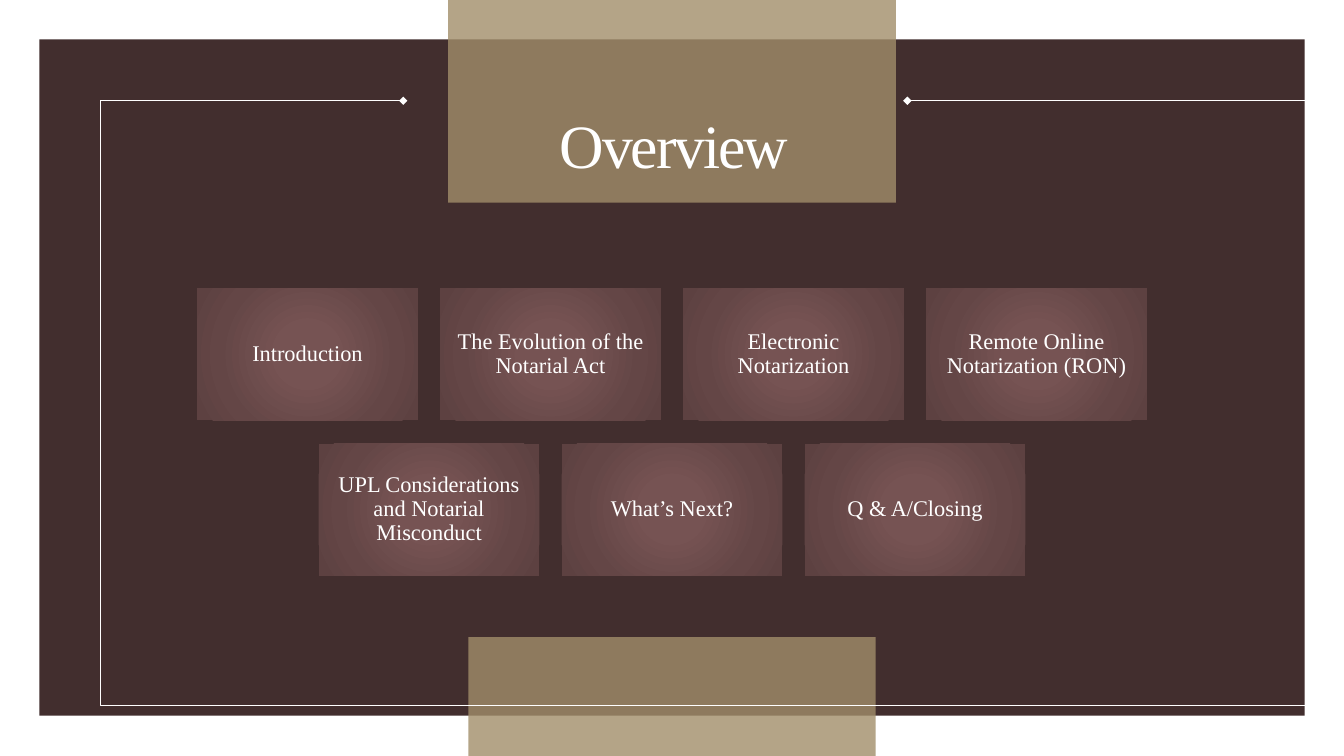
from lxml import etree
from pptx import Presentation
from pptx import util as u
from pptx.dml.color import RGBColor
from pptx.enum import shapes, text
from pptx.oxml import parse_xml
from pptx.oxml.ns import nsdecls, qn

WIDE, HIGH = 13.33, 7.5
FONT = "Times New Roman"
HUES = {"panel": "422E2E", "gold": "A28E6A", "white": "FFFFFF",
        "core": "765353", "mid": "644646", "edge": "5D4141"}
STOPS = [(0, "core"), (23, "core"), (69, "mid"), (97, "edge")]
CARD_W, CARD_H = 2.19, 1.31
STEP_X, STEP_Y = 2.41, 1.54
CARD_TOP = 2.86
TOPICS = [
    ["Introduction", "The Evolution of the Notarial Act",
     "Electronic Notarization", "Remote Online Notarization (RON)"],
    ["UPL Considerations and Notarial Misconduct", "What’s Next?",
     "Q & A/Closing"],
]


def hue(name):
    return RGBColor.from_string(HUES[name])


def mid(width):
    """Left edge that centres a width on the slide."""
    return (WIDE - width) / 2


def add_rect(slide, x, y, w, h, fill=None, alpha=None):
    rect = slide.shapes.add_shape(shapes.MSO_SHAPE.RECTANGLE,
                                  *map(u.Inches, (x, y, w, h)))
    rect.shadow.inherit = False
    rect.line.fill.background()
    if fill:
        rect.fill.solid()
        rect.fill.fore_color.rgb = hue(fill)
    if alpha:
        color = rect.element.spPr.find(".//" + qn("a:srgbClr"))
        etree.SubElement(color, qn("a:alpha")).set("val", str(alpha * 1000))
    return rect


def add_glow(rect):
    """Fill a rectangle with a gradient that spreads from its centre."""
    stops = "".join(f'<a:gs pos="{pos * 1000}"><a:srgbClr val="{HUES[name]}"/></a:gs>'
                    for pos, name in STOPS)
    grad = parse_xml(
        f'<a:gradFill {nsdecls("a")} rotWithShape="1"><a:gsLst>{stops}</a:gsLst>'
        '<a:path path="circle"><a:fillToRect l="50000" t="50000" r="50000" '
        'b="50000"/></a:path></a:gradFill>')
    rect.element.spPr.find(qn("a:prstGeom")).addnext(grad)


def set_text(shape, words, size, anchor):
    frame = shape.text_frame
    frame.word_wrap = True
    frame.vertical_anchor = anchor
    para = frame.paragraphs[0]
    para.text = words
    para.alignment = text.PP_ALIGN.CENTER
    para.line_spacing = 0.9
    para.font.size = u.Pt(size)
    para.font.name = FONT
    para.font.color.rgb = hue("white")
    return frame


def add_frame(slide):
    """Thin border, open at the top, with a diamond at each end."""
    left, top, low, gap = 0.79, 0.79, 6.67, 4.01
    right = WIDE - left
    pen = slide.shapes.build_freeform(WIDE - gap, top, scale=u.Inches(1))
    pen.add_line_segments([(right, top), (right, low), (left, low),
                           (left, top), (gap, top)], close=False)
    border = pen.convert_to_shape()
    border.shadow.inherit = False
    border.fill.background()
    border.line.color.rgb = hue("white")
    border.line.width = u.Pt(1)
    line = border.element.spPr.find(qn("a:ln"))
    for end in ("a:headEnd", "a:tailEnd"):
        etree.SubElement(line, qn(end)).set("type", "diamond")


def add_title(slide, words):
    box = slide.shapes.add_textbox(*map(u.Inches, (4.49, 0.39, 4.39, 1.46)))
    frame = set_text(box, words, 44, text.MSO_ANCHOR.BOTTOM)
    frame.paragraphs[0].runs[0].font._element.set("spc", "-150")


def add_card(slide, x, y, words):
    card = add_rect(slide, x, y, CARD_W, CARD_H)
    add_glow(card)
    frame = set_text(card, words, 16, text.MSO_ANCHOR.MIDDLE)
    frame.margin_left = frame.margin_right = u.Inches(0.07)
    frame.margin_top = frame.margin_bottom = u.Inches(0.07)


def add_cards(slide):
    for row, topics in enumerate(TOPICS):
        left = mid((len(topics) - 1) * STEP_X + CARD_W)
        for col, words in enumerate(topics):
            add_card(slide, left + col * STEP_X, CARD_TOP + row * STEP_Y, words)


def main():
    deck = Presentation()
    deck.slide_width, deck.slide_height = u.Inches(WIDE), u.Inches(HIGH)
    slide = deck.slides.add_slide(deck.slide_layouts[6])
    add_rect(slide, mid(12.55), 0.39, 12.55, 6.71, "panel")
    add_rect(slide, mid(4.44), 0, 4.44, 2.01, "gold", 80)
    add_rect(slide, mid(4.04), HIGH - 1.18, 4.04, 1.18, "gold", 80)
    add_frame(slide)
    add_title(slide, "Overview")
    add_cards(slide)
    deck.save("out.pptx")


if __name__ == "__main__":
    main()
